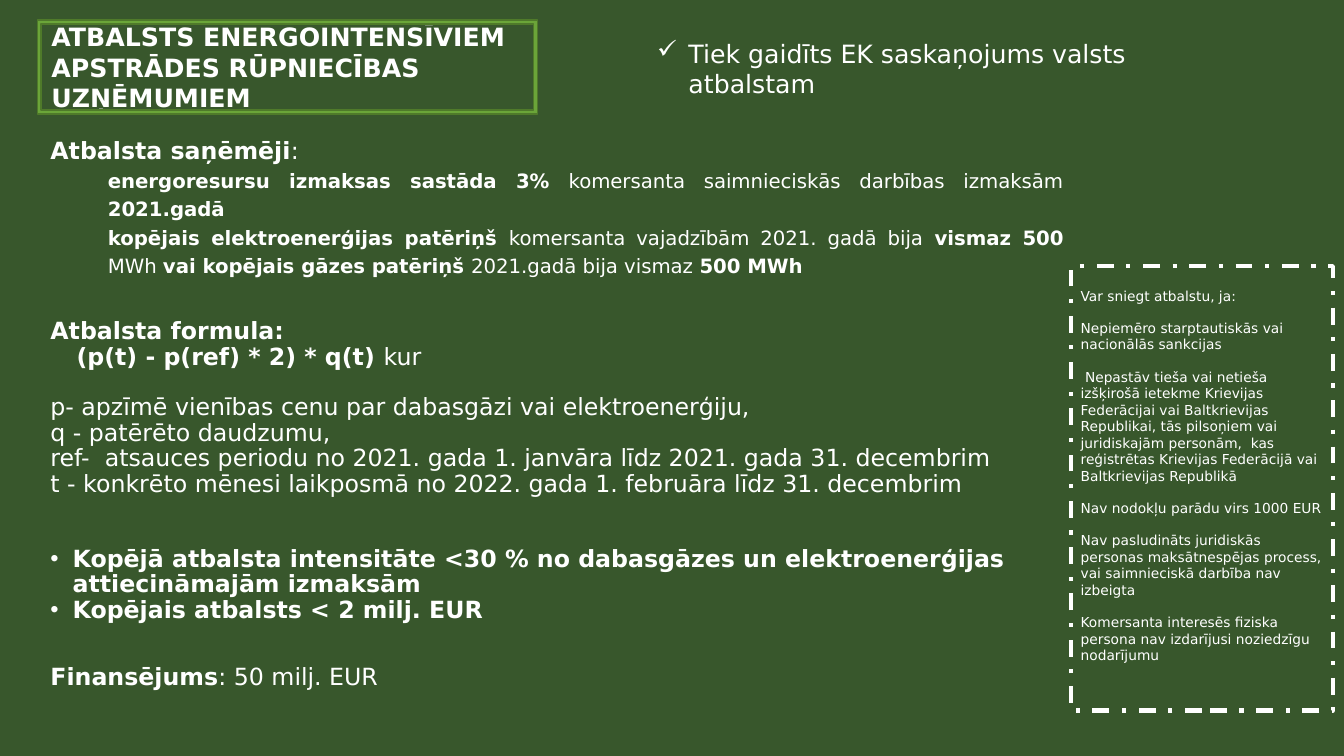
import pptx
import pptx.util
import pptx.dml.color
import pptx.enum.dml
import pptx.enum.shapes
import pptx.enum.text
import pptx.oxml.ns
from lxml import etree

Inches = pptx.util.Inches
Pt = pptx.util.Pt
RGBColor = pptx.dml.color.RGBColor
ALIGN = pptx.enum.text.PP_ALIGN
ANCHOR = pptx.enum.text.MSO_ANCHOR
SHAPE = pptx.enum.shapes.MSO_SHAPE

BACKGROUND = RGBColor(0x38, 0x57, 0x2C)
WHITE = RGBColor(0xFF, 0xFF, 0xFF)
FRAME_FILL = RGBColor(0x6B, 0xA5, 0x39)
FRAME_LINE = RGBColor(0x4F, 0x7A, 0x2A)
FONT = "DejaVu Sans"
BODY_SIZE = 16.9
CRITERIA_SIZE = 14.1
SIDE_SIZE = 9.8
LINE = 1.164  # line height of the font, in ems
WIDE, TIGHT = 1.2, 0.9

TITLE = "ATBALSTS ENERGOINTENSĪVIEM APSTRĀDES RŪPNIECĪBAS UZŅĒMUMIEM"
STATUS = "Tiek gaidīts EK saskaņojums valsts atbalstam"

# Text between bars is bold
CRITERIA = [
    "|energoresursu izmaksas sastāda 3%| komersanta saimnieciskās darbības izmaksām |2021.gadā|",
    "|kopējais elektroenerģijas patēriņš |komersanta vajadzībām 2021. gadā bija |vismaz 500 |MWh "
    "|vai kopējais gāzes patēriņš |2021.gadā bija vismaz |500 MWh|",
]
TERMS = [
    "p- apzīmē vienības cenu par dabasgāzi vai elektroenerģiju,",
    "q - patērēto daudzumu,",
    "ref-  atsauces periodu no 2021. gada 1. janvāra līdz 2021. gada 31. decembrim",
    "t - konkrēto mēnesi laikposmā no 2022. gada 1. februāra līdz 31. decembrim",
]
LIMITS = [
    "|Kopējā atbalsta intensitāte <30 % no dabasgāzes un elektroenerģijas attiecināmajām izmaksām |",
    "|Kopējais atbalsts < 2 milj. EUR|",
]
CONDITIONS = [
    "Var sniegt atbalstu, ja:",
    "Nepiemēro starptautiskās vai nacionālās sankcijas",
    " Nepastāv tieša vai netieša izšķirošā ietekme Krievijas Federācijai vai Baltkrievijas "
    "Republikai, tās pilsoņiem vai juridiskajām personām,  kas reģistrētas Krievijas Federācijā "
    "vai Baltkrievijas Republikā",
    "Nav nodokļu parādu virs 1000 EUR",
    "Nav pasludināts juridiskās personas maksātnespējas process, vai saimnieciskā darbība nav izbeigta",
    "Komersanta interesēs fiziska persona nav izdarījusi noziedzīgu nodarījumu",
]


def place(sp, box):
    sp.left, sp.top, sp.width, sp.height = (Inches(v) for v in box)


def setup_text(sp, inset=(0.1, 0.05, 0.1, 0.05), anchor=ANCHOR.TOP):
    tf = sp.text_frame
    tf.word_wrap = True
    tf.auto_size = pptx.enum.text.MSO_AUTO_SIZE.NONE
    tf.vertical_anchor = anchor
    tf.margin_left, tf.margin_top, tf.margin_right, tf.margin_bottom = (Inches(v) for v in inset)
    return tf


def add_paragraph(tf, text, size, align=ALIGN.LEFT, spacing=1.0, before=0.0,
                  indent=0.0, bullet=None):
    """Adds a paragraph; before is the gap above it in points."""
    p = tf.paragraphs[0]
    if p.runs:
        p = tf.add_paragraph()
    p.alignment = align
    p.line_spacing = spacing
    p.space_before = Pt(before)
    p.space_after = Pt(0)
    pPr = p._p.get_or_add_pPr()
    pPr.set("marL", str(Inches(indent)))
    pPr.set("indent", str(-Inches(indent) if bullet else 0))
    bu = etree.SubElement(pPr, pptx.oxml.ns.qn("a:buChar" if bullet else "a:buNone"))
    if bullet:
        bu.set("char", bullet)
    for i, part in enumerate(text.split("|")):
        if part:
            r = p.add_run()
            r.text = part
            r.font.name = FONT
            r.font.size = Pt(size)
            r.font.bold = i % 2 == 1
            r.font.color.rgb = WHITE


def add_title(slide, box):
    # Green frame
    sp = slide.shapes.add_shape(SHAPE.FRAME, *(Inches(v) for v in box))
    sp.shadow.inherit = False
    sp.adjustments[0] = 0.04
    sp.fill.solid()
    sp.fill.fore_color.rgb = FRAME_FILL
    sp.line.color.rgb = FRAME_LINE
    sp.line.width = Pt(1)
    # Title inside the frame
    title = slide.shapes.title
    place(title, box)
    tf = setup_text(title, (0.14, 0.05, 0.14, 0.05), ANCHOR.MIDDLE)
    add_paragraph(tf, f"|{TITLE}|", 18)


def add_status(slide, box):
    sp = slide.shapes.add_textbox(*(Inches(v) for v in box))
    add_paragraph(setup_text(sp), STATUS, 18, indent=0.31, bullet="✓")


def add_body(slide, box):
    body = slide.placeholders[1]
    place(body, box)
    tf = setup_text(body, (0.07, 0.04, 0.07, 0.04))
    wide_gap = BODY_SIZE * LINE * WIDE
    tight_gap = BODY_SIZE * LINE * TIGHT

    # Recipients
    add_paragraph(tf, "|Atbalsta saņēmēji|:", BODY_SIZE, spacing=WIDE)
    for text in CRITERIA:
        add_paragraph(tf, text, CRITERIA_SIZE, ALIGN.JUSTIFY, WIDE, indent=0.57)

    # Formula and its terms
    add_paragraph(tf, "|Atbalsta formula:|", BODY_SIZE, spacing=WIDE, before=wide_gap)
    add_paragraph(tf, "|(p(t) - p(ref) * 2) * q(t) |kur", BODY_SIZE, ALIGN.JUSTIFY, TIGHT,
                  indent=0.26)
    for i, text in enumerate(TERMS):
        add_paragraph(tf, text, BODY_SIZE, ALIGN.JUSTIFY, TIGHT, 0 if i else tight_gap)

    # Limits and funding
    for i, text in enumerate(LIMITS):
        add_paragraph(tf, text, BODY_SIZE, spacing=TIGHT, before=0 if i else 2 * tight_gap,
                      indent=0.22, bullet="•")
    add_paragraph(tf, "|Finansējums|: 50 milj. EUR", BODY_SIZE, spacing=WIDE, before=wide_gap)


def add_conditions(slide, box):
    sp = slide.shapes.add_shape(SHAPE.RECTANGLE, *(Inches(v) for v in box))
    sp.shadow.inherit = False
    sp.fill.background()
    sp.line.color.rgb = WHITE
    sp.line.width = Pt(3)
    sp.line.dash_style = pptx.enum.dml.MSO_LINE.DASH_DOT
    tf = setup_text(sp, (0.1, 0.21, 0.1, 0.05))
    for i, text in enumerate(CONDITIONS):
        add_paragraph(tf, text, SIDE_SIZE, before=SIDE_SIZE * LINE if i else 0)


def main():
    prs = pptx.Presentation()
    prs.slide_width, prs.slide_height = Inches(13.33), Inches(7.5)
    slide = prs.slides.add_slide(prs.slide_layouts[1])
    slide.background.fill.solid()
    slide.background.fill.fore_color.rgb = BACKGROUND
    add_body(slide, (0.43, 1.25, 10.19, 6.17))
    add_conditions(slide, (10.62, 2.64, 2.6, 4.41))
    add_title(slide, (0.37, 0.2, 4.96, 0.93))
    add_status(slide, (6.42, 0.33, 5.81, 1.01))
    prs.save("out.pptx")


if __name__ == "__main__":
    main()
